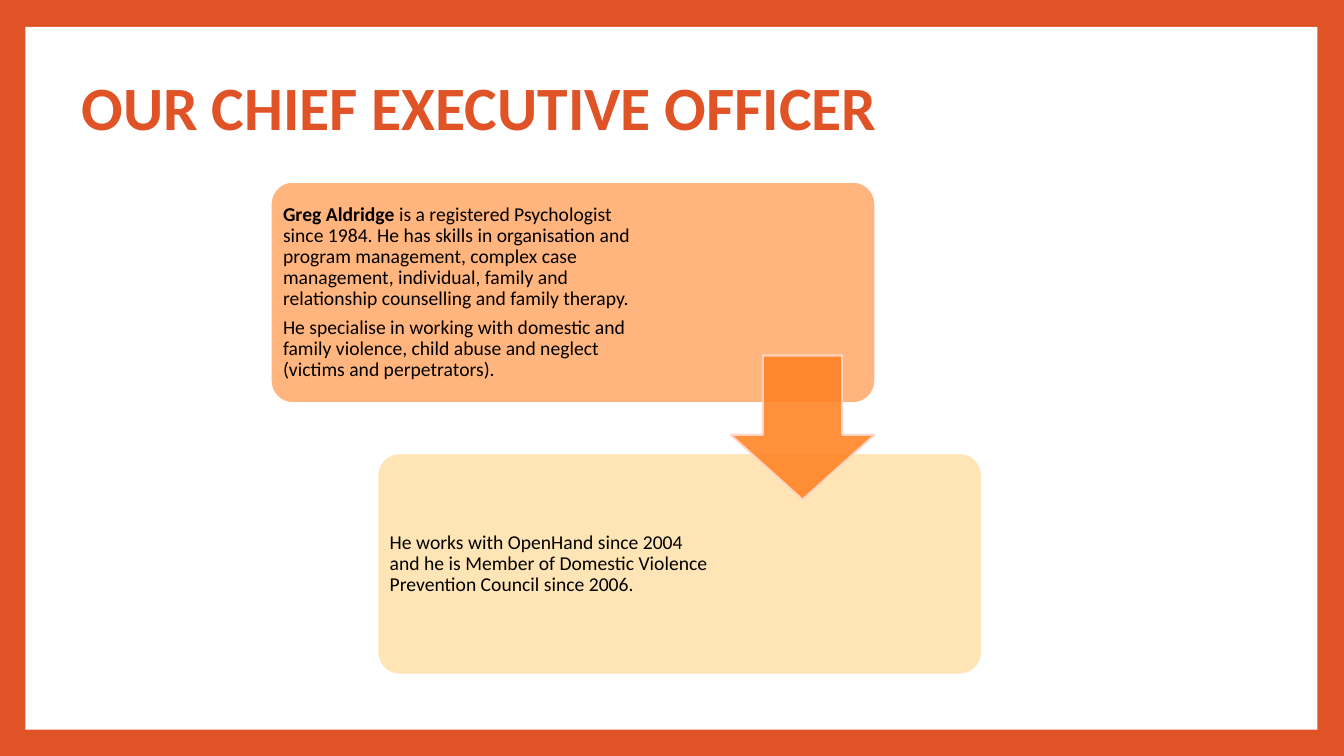
import lxml.etree
import pptx
import pptx.dml.color
import pptx.enum.shapes
import pptx.enum.text
import pptx.oxml.ns
import pptx.util
from pptx.util import Cm

COLORS = {
    "frame": "DF5327",
    "panel": "FFFFFF",
    "text": "000000",
    "career": "FFB57D",
    "membership": "FFE5B5",
    "arrow": "FF8427",
    "arrow_edge": "FFD9CD",
}
FONT = "Calibri"
SHAPES = pptx.enum.shapes.MSO_SHAPE
MIDDLE = pptx.enum.text.MSO_ANCHOR.MIDDLE
LEFT = pptx.enum.text.PP_ALIGN.LEFT

CAREER = [
    [("Greg Aldridge ", True),
     ("is a registered Psychologist since 1984. He has skills in organisation and "
      "program management, complex case management, individual, family and "
      "relationship counselling and family therapy.", False)],
    [("He specialise in working with domestic and family violence, child abuse and "
      "neglect (victims and perpetrators).", False)],
]
MEMBERSHIP = [
    [("He works with OpenHand since 2004 and he is Member of Domestic Violence "
      "Prevention Council since 2006.", False)],
]


def rgb(name):
    return pptx.dml.color.RGBColor.from_string(COLORS[name])


def style_run(run, size, color, bold):
    run.font.name = FONT
    run.font.size = pptx.util.Pt(size)
    run.font.bold = bold
    run.font.color.rgb = rgb(color)


def add_block(slide, preset, box, fill, edge=None):
    block = slide.shapes.add_shape(preset, *map(Cm, box))
    block.shadow.inherit = False
    block.fill.solid()
    block.fill.fore_color.rgb = rgb(fill)
    if edge:
        block.line.color.rgb = rgb(edge)
        block.line.width = pptx.util.Pt(1.5)
    else:
        block.line.fill.background()
    return block


def add_panel(slide):
    """White area inside the coloured frame, behind everything else."""
    panel = add_block(slide, SHAPES.RECTANGLE, (0.64, 0.68, 32.56, 17.71), "panel")
    slide.shapes._spTree.insert(2, panel._element)


def set_title(slide, text):
    title = slide.shapes.title
    title.left, title.top, title.width, title.height = map(Cm, (1.8, 1.7, 27.89, 2.15))
    frame = title.text_frame
    frame.text = text
    frame.auto_size = pptx.enum.text.MSO_AUTO_SIZE.NONE
    frame.vertical_anchor = MIDDLE
    heading = frame.paragraphs[0]
    heading.alignment = LEFT
    heading.line_spacing = 0.9
    style_run(heading.runs[0], 44, "frame", True)


def add_card(slide, left, top, fill, paragraphs, right_margin):
    card = add_block(slide, SHAPES.ROUNDED_RECTANGLE, (left, top, 15.24, 5.58), fill, "panel")
    card.adjustments[0] = 0.1
    frame = card.text_frame
    frame.word_wrap = True
    frame.vertical_anchor = MIDDLE
    frame.margin_left = frame.margin_top = frame.margin_bottom = Cm(0.15)
    frame.margin_right = Cm(right_margin)
    for index, pieces in enumerate(paragraphs):
        paragraph = frame.add_paragraph() if index else frame.paragraphs[0]
        paragraph.alignment = LEFT
        paragraph.line_spacing = 0.9
        paragraph.space_after = pptx.util.Pt(5)
        for text, bold in pieces:
            run = paragraph.add_run()
            run.text = text
            style_run(run, 14, "text", bold)


def add_step_arrow(slide):
    arrow = add_block(slide, SHAPES.DOWN_ARROW, (18.41, 8.96, 3.63, 3.63), "arrow", "arrow_edge")
    arrow.adjustments[0] = 0.55
    arrow.adjustments[1] = 0.45
    for color in arrow._element.spPr.iter(pptx.oxml.ns.qn("a:srgbClr")):
        lxml.etree.SubElement(color, pptx.oxml.ns.qn("a:alpha"), val="90000")


def main():
    deck = pptx.Presentation()
    deck.slide_width, deck.slide_height = Cm(33.87), Cm(19.05)
    slide = deck.slides.add_slide(deck.slide_layouts[5])
    slide.background.fill.solid()
    slide.background.fill.fore_color.rgb = rgb("frame")

    add_panel(slide)
    set_title(slide, "OUR CHIEF EXECUTIVE OFFICER")
    add_card(slide, 6.82, 4.58, "career", CAREER, 5.63)
    add_card(slide, 9.51, 11.42, "membership", MEMBERSHIP, 6.5)
    add_step_arrow(slide)
    deck.save("out.pptx")


if __name__ == "__main__":
    main()
